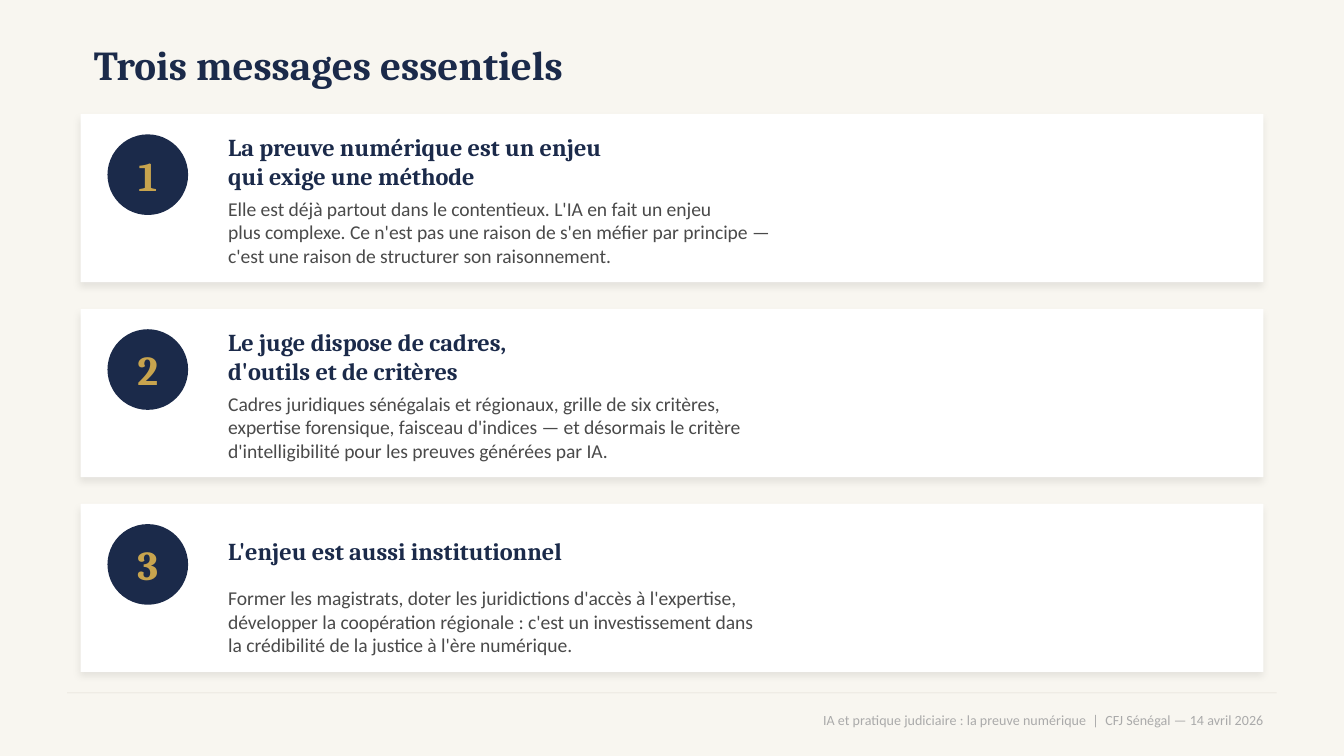
from lxml import etree
from pptx import Presentation
from pptx import util as u
from pptx.dml.color import RGBColor
from pptx.enum import shapes, text
from pptx.oxml.ns import qn

HUES = {
    "paper": "F8F6F0", "card": "FFFFFF", "navy": "1B2A4A", "gold": "C8A44E",
    "body": "4A4A4A", "rule": "EFECE5", "foot": "AAAAAA", "shade": "000000",
}
STYLES = {
    "title": {"name": "Cambria", "size": 22, "bold": True, "hue": "navy"},
    "digit": {"name": "Cambria", "size": 22, "bold": True, "hue": "gold"},
    "head": {"name": "Cambria", "size": 13, "bold": True, "hue": "navy"},
    "body": {"name": "Calibri", "size": 10.5, "hue": "body"},
    "foot": {"name": "Calibri", "size": 7.5, "hue": "foot"},
}
CARDS = [
    (["La preuve numérique est un enjeu",
      "qui exige une méthode"],
     ["Elle est déjà partout dans le contentieux. L'IA en fait un enjeu",
      "plus complexe. Ce n'est pas une raison de s'en méfier par principe —",
      "c'est une raison de structurer son raisonnement."]),
    (["Le juge dispose de cadres,",
      "d'outils et de critères"],
     ["Cadres juridiques sénégalais et régionaux, grille de six critères,",
      "expertise forensique, faisceau d'indices — et désormais le critère",
      "d'intelligibilité pour les preuves générées par IA."]),
    (["L'enjeu est aussi institutionnel"],
     ["Former les magistrats, doter les juridictions d'accès à l'expertise,",
      "développer la coopération régionale : c'est un investissement dans",
      "la crédibilité de la justice à l'ère numérique."]),
]
WIDE = u.Inches(10)
CELL = WIDE // 100  # the slide is a grid of 100 square columns
LEFT = text.PP_ALIGN.LEFT
MID = text.PP_ALIGN.CENTER
RIGHT = text.PP_ALIGN.RIGHT


def tint(hue):
    return RGBColor.from_string(HUES[hue])


def scale(box):
    """Turn grid cells into slide lengths."""
    return [round(side * CELL) for side in box]


def draw(slide, kind, box, hue):
    shape = slide.shapes.add_shape(kind, *scale(box))
    shape.shadow.inherit = False
    shape.fill.solid()
    shape.fill.fore_color.rgb = tint(hue)
    shape.line.fill.background()
    return shape


def write(slide, box, lines, style, align=LEFT):
    frame = slide.shapes.add_textbox(*scale(box)).text_frame
    frame.word_wrap = True
    frame.vertical_anchor = text.MSO_ANCHOR.MIDDLE
    look = dict(STYLES[style])
    hue = look.pop("hue")
    look["size"] = u.Pt(look["size"])
    for i, line in enumerate(lines):
        para = frame.paragraphs[0] if i == 0 else frame.add_paragraph()
        para.alignment = align
        run = para.add_run()
        run.text = line
        for key, value in look.items():
            setattr(run.font, key, value)
        run.font.color.rgb = tint(hue)


def shade(shape):
    """Give the shape a soft outer shadow."""
    glow = shape._element.spPr.find(qn("a:effectLst"))
    outer = etree.SubElement(
        glow, qn("a:outerShdw"), blurRad=str(u.Pt(4)), dist=str(u.Pt(2)),
        dir=str(135 * 60000), algn="bl", rotWithShape="0")
    color = etree.SubElement(outer, qn("a:srgbClr"), val=HUES["shade"])
    etree.SubElement(color, qn("a:alpha"), val="8000")


def card(slide, box, digit, head, body):
    x, y, w, h = box
    shade(draw(slide, shapes.MSO_SHAPE.RECTANGLE, box, "card"))
    disc = (x + 2, y + 1.5, 6, 6)
    draw(slide, shapes.MSO_SHAPE.OVAL, disc, "navy")
    write(slide, disc, [str(digit)], "digit", MID)
    write(slide, (x + 10, y + 1, w - 13, 5), head, "head")
    write(slide, (x + 10, y + 6, w - 13, h - 7), body, "body")


def footer(slide, box):
    x, y, w, h = box
    draw(slide, shapes.MSO_SHAPE.RECTANGLE, (x, y, w, 0.1), "rule")
    note = ("IA et pratique judiciaire : la preuve numérique  |  "
            "CFJ Sénégal — 14 avril 2026")
    write(slide, (x, y + 0.3, w, h - 0.3), [note], "foot", RIGHT)


def main():
    deck = Presentation()
    deck.slide_width = WIDE
    deck.slide_height = WIDE * 9 // 16
    slide = deck.slides.add_slide(deck.slide_layouts[6])
    slide.background.fill.solid()
    slide.background.fill.fore_color.rgb = tint("paper")

    footer(slide, (5, 51.5, 90, 3.8))
    write(slide, (6, 2.5, 90, 4.5), ["Trois messages essentiels"], "title")
    tall, gap = 12.5, 2
    for i, (head, body) in enumerate(CARDS):
        card(slide, (6, 8.5 + i * (tall + gap), 88, tall), i + 1, head, body)
    deck.save("out.pptx")


if __name__ == "__main__":
    main()
